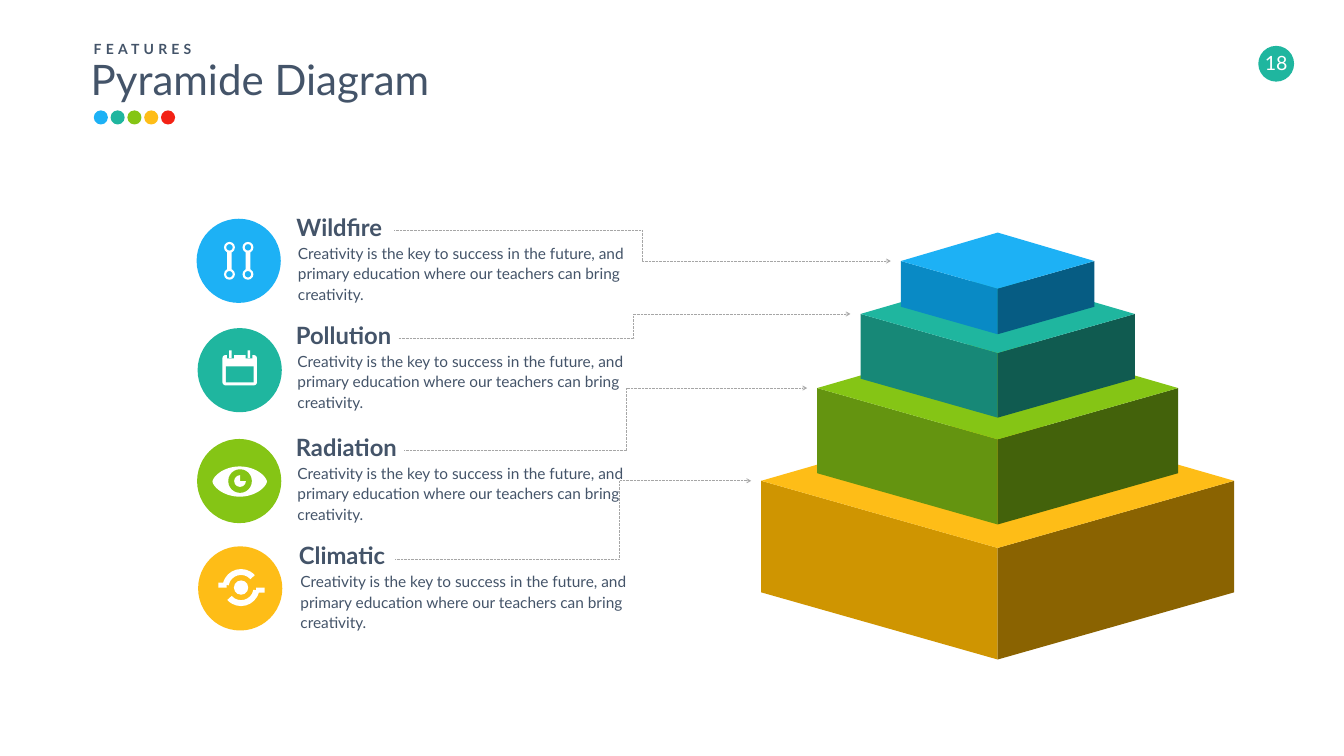
from math import cos, pi, sin

from lxml import etree
from pptx import Presentation
from pptx.dml.color import RGBColor
from pptx.enum.dml import MSO_LINE
from pptx.enum.shapes import MSO_CONNECTOR, MSO_SHAPE
from pptx.enum.text import MSO_ANCHOR, MSO_AUTO_SIZE, PP_ALIGN
from pptx.oxml.ns import qn
from pptx.util import Inches, Pt

OVAL, RECT, ROUND = MSO_SHAPE.OVAL, MSO_SHAPE.RECTANGLE, MSO_SHAPE.ROUNDED_RECTANGLE
RING, PIE, ARC = MSO_SHAPE.DONUT, MSO_SHAPE.PIE, MSO_SHAPE.BLOCK_ARC
ELBOW, DOTS = MSO_CONNECTOR.ELBOW, MSO_LINE.ROUND_DOT
LEFT, CENTER = PP_ALIGN.LEFT, PP_ALIGN.CENTER
TOP, MIDDLE = MSO_ANCHOR.TOP, MSO_ANCHOR.MIDDLE

COLS, ROWS = 26.66, 15  # grid of one-inch cells
CELL = Inches(1)
FONT = "Lato"

INK = RGBColor(0x44, 0x54, 0x69)
GREY = RGBColor(0xA6, 0xA6, 0xA6)
WHITE = RGBColor(0xFF, 0xFF, 0xFF)
RED = RGBColor(0xF3, 0x22, 0x15)
BLUE = RGBColor(0x1D, 0xB1, 0xF5)
TEAL = RGBColor(0x1F, 0xB6, 0x9F)
GREEN = RGBColor(0x85, 0xC5, 0x15)
GOLD = RGBColor(0xFE, 0xBD, 0x17)
BLUES = BLUE, RGBColor(0x09, 0x8A, 0xC5), RGBColor(0x06, 0x5C, 0x83)
TEALS = TEAL, RGBColor(0x17, 0x88, 0x77), RGBColor(0x10, 0x5B, 0x50)
GREENS = GREEN, RGBColor(0x64, 0x94, 0x10), RGBColor(0x43, 0x62, 0x0B)
GOLDS = GOLD, RGBColor(0xCF, 0x95, 0x01), RGBColor(0x8A, 0x63, 0x01)

BODY = ("Creativity is the key to success in the future, and primary "
        "education where our teachers can bring creativity.")

# Icon parts: kind, centre and size as shares of the disc, white or not, adjustments
FORK = [(RING, x, y, .13, .13, True, [.2]) for x in (-.11, .11) for y in (-.16, .16)]
FORK += [(RECT, x, 0, .055, .22, True, []) for x in (-.11, .11)]
DATE = [(ROUND, 0, 0, .41, .36, True, [.1]), (RECT, 0, .05, .33, .19, False, [])]
DATE += [(RECT, x, -.16, .08, .04, False, []) for x in (-.11, .11)]
DATE += [(RECT, x, -.19, .03, .09, True, []) for x in (-.11, .11)]
EYE = [(OVAL, .01, 0, .28, .28, False, []), (PIE, .01, 0, .14, .14, True, [])]
STORM = [(OVAL, .01, -.01, .17, .17, True, []),
         (ARC, .01, -.01, .44, .44, True, [114, 190.8, .16]),
         (ARC, .01, -.01, .44, .44, True, [6, 82.8, .16]),
         (RECT, -.21, -.04, .1, .06, True, []),
         (RECT, .24, .02, .1, .06, True, [])]

# Name, disc corner, text corner, icon, line start, line bend, tier rim, half width, shades
ITEMS = [
    ("Wildfire", (3.9, 4.34), (5.64, 4.1), FORK, 7.82, .5, 5.18, 1.92, BLUES),
    ("Pollution", (3.92, 6.51), (5.63, 6.24), DATE, 7.91, .52, 6.23, 2.72, TEALS),
    ("Radiation", (3.91, 8.71), (5.63, 8.46), EYE, 8.02, .55, 7.7, 3.58, GREENS),
    ("Climatic", (3.93, 10.84), (5.69, 10.61), STORM, 7.84, .63, 9.54, 4.69, GOLDS),
]
AXIS = 19.79  # middle of the pyramid
DISC = 1.67


def cells(*sizes):
    return [round(s * CELL) for s in sizes]


def paint(shape, color):
    shape.shadow.inherit = False
    shape.fill.solid()
    shape.fill.fore_color.rgb = color
    shape.line.fill.background()
    return shape


def put(shapes, kind, x, y, w, h, color):
    return paint(shapes.add_shape(kind, *cells(x, y, w, h)), color)


def poly(shapes, points, color):
    dots = [cells(*p) for p in points]
    build = shapes.build_freeform(*dots[0], scale=1.0)
    build.add_line_segments(dots[1:], close=True)
    return paint(build.convert_to_shape(), color)


def write(shape, text, size, color=INK, bold=False, pad=(.1, .05), align=LEFT, anchor=TOP):
    frame = shape.text_frame
    frame.text = text
    frame.word_wrap = True
    frame.auto_size = MSO_AUTO_SIZE.NONE
    frame.vertical_anchor = anchor
    frame.margin_left, frame.margin_top = frame.margin_right, frame.margin_bottom = cells(*pad)
    para = frame.paragraphs[0]
    para.alignment = align
    font = para.font
    font.name, font.size, font.bold, font.color.rgb = FONT, Pt(size), bold, color
    return para


def note(shapes, x, y, w, h, *args, **style):
    return write(shapes.add_textbox(*cells(x, y, w, h)), *args, **style)


def header(shapes, x, y):
    """Title block with its top left corner at x, y."""
    title = shapes.title
    title.left, title.top, title.width, title.height = cells(x, y + .25, 7.02, 1.11)
    write(title, "Pyramide Diagram", 60)
    top = note(shapes, x + .06, y, 3, .44, "FEATURES", 20, bold=True)
    top.runs[0].font._element.set("spc", "600")
    for i, color in enumerate((BLUE, TEAL, GREEN, GOLD, RED)):
        put(shapes, OVAL, x + .16 + i / 3, y + 1.43, .28, .28, color)


def badge(shapes, x, y, size):
    disc = put(shapes, OVAL, x, y, size, size, TEAL)
    para = write(disc, "18", 28, WHITE, pad=(0, 0), align=CENTER, anchor=MIDDLE)
    disc.text_frame.margin_bottom = Inches(.06)
    disc.text_frame.word_wrap = False
    return para


def icon(shapes, x, y, parts, color):
    """Disc with its top left corner at x, y and an icon on it."""
    put(shapes, OVAL, x, y, DISC, DISC, color)
    mx, my = x + DISC / 2, y + DISC / 2
    if parts is EYE:
        turns = [2 * pi * i / 60 for i in range(60)]
        poly(shapes, [(mx + .01 + .54 * cos(t), my + .01 + .3 * sin(t) * abs(sin(t)) ** .3)
                      for t in turns], WHITE)
    for kind, dx, dy, w, h, light, adjust in parts:
        part = put(shapes, kind, mx + (dx - w / 2) * DISC, my + (dy - h / 2) * DISC,
                   w * DISC, h * DISC, WHITE if light else color)
        for i, value in enumerate(adjust):
            part.adjustments[i] = value


def label(shapes, x, y, name):
    note(shapes, x, y, 3, .81, name, 34, bold=True, pad=(.24, .12))
    note(shapes, x + .03, y + .59, 7.05, 1.46, BODY, 22, pad=(.24, .12)).line_spacing = 1.1


def tier(shapes, mid, rim, half, shades):
    """Block whose side corners lie at height rim, half a width from mid."""
    drop, deep = .284 * half, .472 * half
    for side, color in zip((-half, half), shades[1:]):
        poly(shapes, [(mid, rim + drop), (mid + side, rim), (mid + side, rim + deep),
                      (mid, rim + drop + deep)], color)
    poly(shapes, [(mid, rim + drop), (mid - half, rim), (mid, rim - drop - .02),
                  (mid + half, rim)], shades[0])


def leader(shapes, x, y, tip, rim, bend):
    link = shapes.add_connector(ELBOW, *cells(x, y, tip, rim))
    link.line.color.rgb, link.line.width, link.line.dash_style = GREY, Pt(1), DOTS
    props = link._element.spPr
    etree.SubElement(props.find(qn("a:ln")), qn("a:tailEnd"), type="arrow")
    etree.SubElement(props, qn("a:effectLst"))
    geom = props.find(qn("a:prstGeom"))
    guides = geom.find(qn("a:avLst"))
    if guides is None:
        guides = etree.SubElement(geom, qn("a:avLst"))
    etree.SubElement(guides, qn("a:gd"), name="adj1", fmla=f"val {round(bend * 100000)}")


def main():
    deck = Presentation()
    deck.slide_width, deck.slide_height = cells(COLS, ROWS)
    shapes = deck.slides.add_slide(deck.slide_layouts[5]).shapes
    header(shapes, 1.7, .76)
    badge(shapes, 24.96, .91, .71)
    for name, disc, text, parts, start, bend, rim, half, shades in ITEMS:
        icon(shapes, *disc, parts, shades[0])
        label(shapes, *text, name)
        leader(shapes, start, text[1] + .48, AXIS - half - .2, rim, bend)
    for *_, rim, half, shades in reversed(ITEMS):
        tier(shapes, AXIS, rim, half, shades)
    deck.save("out.pptx")


if __name__ == "__main__":
    main()
